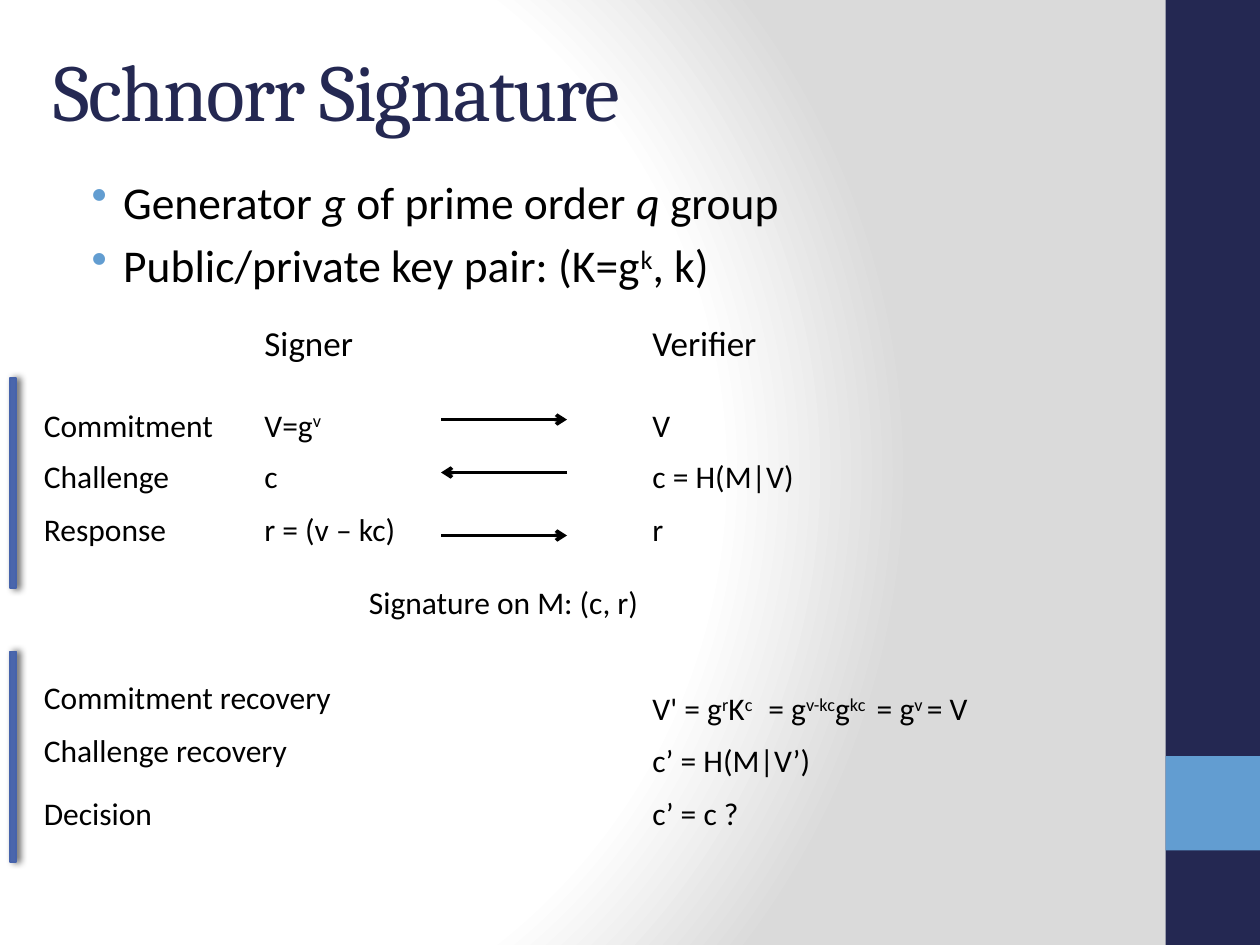
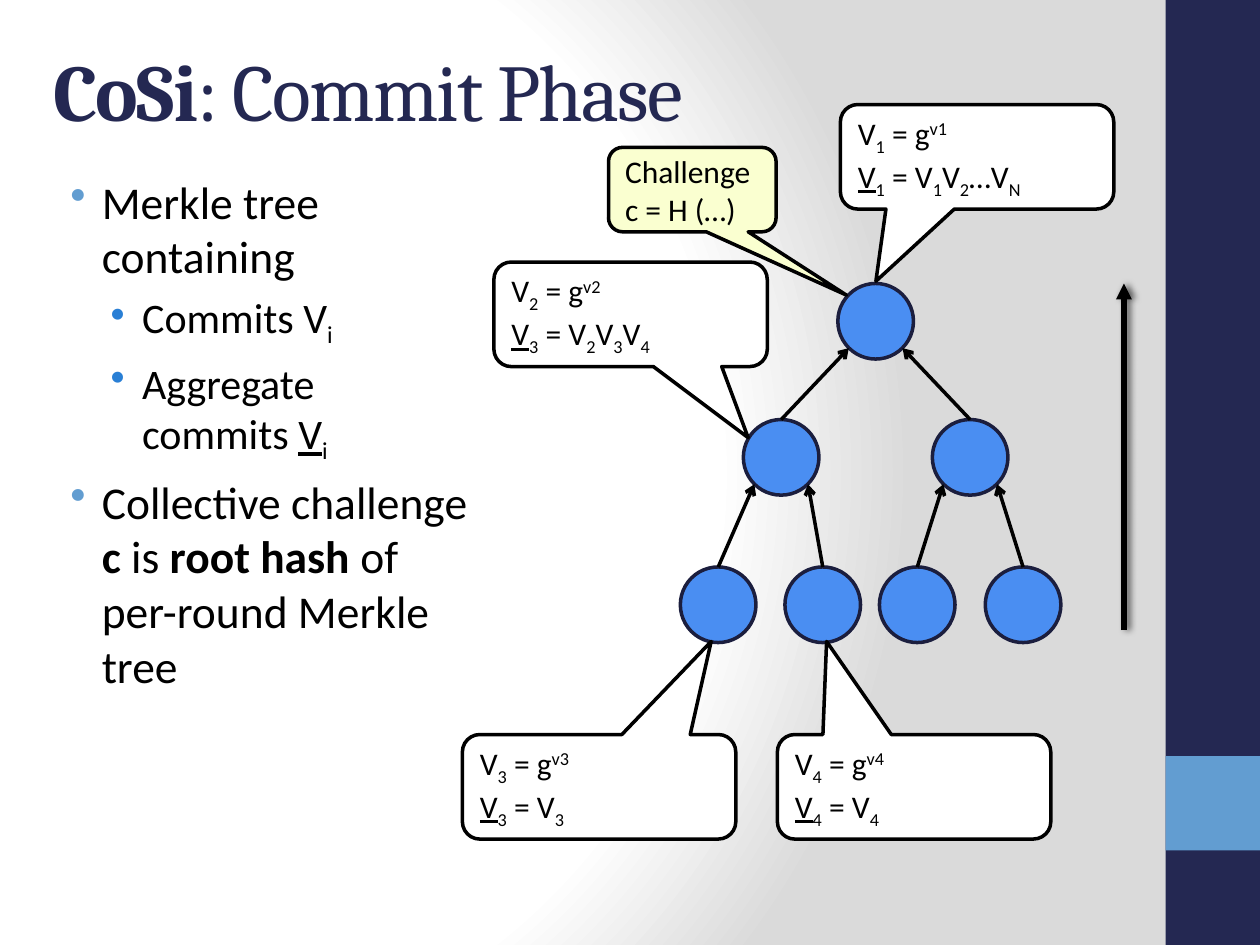
from lxml import etree
from pptx import Presentation, util as u
from pptx.dml.color import RGBColor
from pptx.enum import shapes, text
from pptx.oxml.ns import qn

NAVY, SKY, BLACK, WHITE = "242852", "629DD1", "000000", "FFFFFF"
NODE_FILL, NODE_EDGE, CHALLENGE_FILL = "4A8EF2", "1B1E3E", "FAFFD0"
BRACKET_FILL, BRACKET_EDGE = "4A66AC", "4663AB"
BACKDROP = [(0, WHITE), (75, WHITE), (100, "DADADA")]
BULLETS = [(0.38, 26, SKY), (0.7, 24, "297FD5")]
BASELINES = {"sup": "30000", "sub": "-25000"}
KIND = shapes.MSO_SHAPE

GROUP_FACTS = [
    (0, ["Generator ", ("g", "i"), " of prime order ", ("q", "i"), " group"]),
    (0, ["Public/private key pair: (K=g", ("k", "sup"), ", k)"]),
]
STEP_X, SIGNER_X, VERIFIER_X = 0.25, 2, 5.08
PARTIES = [(SIGNER_X, 0.92, "Signer"), (VERIFIER_X, 1.05, "Verifier")]
PROTOCOL = {
    3.17: [(STEP_X, 1.56, ["Commitment"]), (SIGNER_X, 0.68, ["V=g", ("v", "sup")]),
           (VERIFIER_X, 0.35, ["V"])],
    3.58: [(STEP_X, 1.21, ["Challenge"]), (SIGNER_X, 0.31, ["c"]),
           (VERIFIER_X, 1.33, ["c = H(M|V)"])],
    4: [(STEP_X, 1.19, ["Response"]), (SIGNER_X, 1.26, ["r = (v – kc)"]),
        (VERIFIER_X, 0.29, ["r"])],
    4.58: [(2.83, 2.37, ["Signature on M: (c, r)"])],
    5.33: [(STEP_X, 2.52, ["Commitment recovery"])],
    5.42: [(VERIFIER_X, 1.02, ["V' = g", ("r", "sup"), "K", ("c", "sup")]),
           (6, 1.88, ["= g", ("v-kc", "sup"), "g", ("kc ", "sup"), " = g",
                      ("v ", "sup"), "= V"])],
    5.75: [(STEP_X, 2.17, ["Challenge recovery"])],
    5.83: [(VERIFIER_X, 1.46, ["c’ = H(M|V’)"])],
    6.25: [(STEP_X, 1.07, ["Decision"]), (VERIFIER_X, 0.89, ["c’ = c ?"])],
}
MESSAGES = [(3.5, 4.5, 3.33), (4.5, 3.5, 3.75), (3.5, 4.5, 4.25)]
BRACKET_TOPS = [3, 5.17]

MERKLE_FACTS = [
    (0, ["Merkle tree containing"]),
    (1, ["Commits V", ("i", "sub")]),
    (1, ["Aggregate commits ", ("V", "u"), ("i", "sub")]),
    (0, ["Collective challenge ", ("c", "b"), " is ", ("root hash ", "b"),
         "of per-round Merkle tree"]),
]
NODE = 0.6
NODES = {
    "root": (6.65, 2.25), "left": (5.9, 3.33), "right": (7.4, 3.33),
    "leaf 1": (5.4, 4.5), "leaf 2": (6.23, 4.5), "leaf 3": (6.98, 4.5), "leaf 4": (7.82, 4.5),
}
PARENTS = {"leaf 1": "left", "leaf 2": "left", "leaf 3": "right", "leaf 4": "right",
           "left": "root", "right": "root"}
COMMITS = [
    (3.67, 5.83, (0.41, -1.39), "3", "3", ["3"]),
    (6.17, 5.83, (-0.32, -1.39), "4", "4", ["4"]),
    (3.92, 2.08, (0.43, 1.18), "2", "3", ["2", "3", "4"]),
    (6.67, 0.83, (-0.37, 1.19), "1", "1", ["1", "2", "…N"]),
]


def rgb(value):
    return RGBColor.from_string(value)


def add_xml(parent, tag, **attributes):
    return etree.SubElement(parent, qn(tag), attributes)


def write(paragraph, runs, size, color=BLACK, font="Calibri", spacing=None):
    for part in runs:
        words, style = (part, "") if isinstance(part, str) else part
        run = paragraph.add_run()
        run.text = words
        run.font.size, run.font.name = u.Pt(size), font
        run.font.color.rgb = rgb(color)
        run.font.bold = style == "b"
        run.font.italic = style == "i"
        run.font.underline = style == "u"
        properties = run._r.get_or_add_rPr()
        if style in BASELINES:
            properties.set("baseline", BASELINES[style])
        if spacing:
            properties.set("spc", str(spacing))


def text_frame(slide, x, y, w, h, wrap=True):
    frame = slide.shapes.add_textbox(*map(u.Inches, (x, y, w, h))).text_frame
    frame.word_wrap = wrap
    return frame


def label(slide, x, y, w, h, runs, size=18):
    frame = text_frame(slide, x, y, w, h, wrap=False)
    frame.auto_size = text.MSO_AUTO_SIZE.SHAPE_TO_FIT_TEXT
    write(frame.paragraphs[0], runs, size)


def bullet_list(slide, x, y, w, h, items):
    frame = text_frame(slide, x, y, w, h)
    for index, (level, runs) in enumerate(items):
        indent, size, color = BULLETS[level]
        paragraph = frame.add_paragraph() if index else frame.paragraphs[0]
        paragraph.level = level
        if index:
            paragraph.space_before = u.Pt(size * 0.2)
        properties = paragraph._p.get_or_add_pPr()
        properties.set("marL", str(u.Inches(indent)))
        properties.set("indent", str(u.Inches(-0.25)))
        add_xml(add_xml(properties, "a:buClr"), "a:srgbClr", val=color)
        add_xml(properties, "a:buChar", char="•")
        write(paragraph, runs, size)


def block(holder, kind, x, y, w, h, fill, edge=None, width=2):
    shape = holder.shapes.add_shape(kind, *map(u.Inches, (x, y, w, h)))
    shape.shadow.inherit = False
    shape.fill.solid()
    shape.fill.fore_color.rgb = rgb(fill)
    if edge:
        shape.line.color.rgb = rgb(edge)
        shape.line.width = u.Pt(width)
    else:
        shape.line.fill.background()
    return shape


def cast_shadow(effects):
    shadow = add_xml(effects, "a:outerShdw", blurRad=str(u.Pt(4)), dist=str(u.Pt(2)),
                     dir="0", rotWithShape="0")
    add_xml(add_xml(shadow, "a:srgbClr", val=BLACK), "a:alpha", val="60000")


def arrow(holder, start, end, head="arrow", width=2):
    line = holder.shapes.add_connector(shapes.MSO_CONNECTOR.STRAIGHT,
                                       *map(u.Inches, (*start, *end)))
    line.line.color.rgb = rgb(BLACK)
    line.line.width = u.Pt(width)
    add_xml(line.line._get_or_add_ln(), "a:tailEnd", type=head)
    return add_xml(line._element.spPr, "a:effectLst")


def callout(slide, x, y, w, h, tip, fill, lines):
    bubble = block(slide, KIND.ROUNDED_RECTANGULAR_CALLOUT, x, y, w, h, fill, BLACK)
    bubble.adjustments[0], bubble.adjustments[1] = tip
    frame = bubble.text_frame
    frame.word_wrap = True
    frame.vertical_anchor = text.MSO_ANCHOR.MIDDLE
    for index, runs in enumerate(lines):
        paragraph = frame.add_paragraph() if index else frame.paragraphs[0]
        paragraph.alignment = text.PP_ALIGN.LEFT
        write(paragraph, runs, 18)


def paint_backdrop(slide):
    slide.background.fill.gradient()
    gradient = slide._element.find(".//" + qn("a:gradFill"))
    for child in list(gradient):
        gradient.remove(child)
    stops = add_xml(gradient, "a:gsLst")
    for position, color in BACKDROP:
        stop = add_xml(stops, "a:gs", pos=str(position * 1000))
        add_xml(stop, "a:srgbClr", val=color)
    add_xml(add_xml(gradient, "a:path", path="circle"), "a:fillToRect",
            l="20000", t="50000", r="100000", b="50000")


def new_slide(deck, title):
    slide = deck.slides.add_slide(deck.slide_layouts[6])
    paint_backdrop(slide)
    block(slide, KIND.RECTANGLE, 9.25, 0, 0.75, 7.5, NAVY)
    block(slide, KIND.RECTANGLE, 9.25, 6, 0.75, 0.75, SKY)
    frame = text_frame(slide, 0.33, 0.08, 8.77, 1.25)
    frame.vertical_anchor = text.MSO_ANCHOR.MIDDLE
    write(frame.paragraphs[0], title, 46, NAVY, "Cambria", -100)
    return slide


def schnorr_slide(deck):
    slide = new_slide(deck, ["Schnorr Signature"])
    bullet_list(slide, 0.5, 1.33, 8.33, 1.25, GROUP_FACTS)
    for x, w, party in PARTIES:
        label(slide, x, 2.5, w, 0.44, [party], 20)
    for y, cells in PROTOCOL.items():
        for x, w, runs in cells:
            label(slide, x, y, w, 0.4, runs)
    for start, end, y in MESSAGES:
        arrow(slide, (start, y), (end, y))
    for y in BRACKET_TOPS:
        bracket = block(slide, KIND.RECTANGLE, 0.08, y, 0.05, 1.67, BRACKET_FILL, BRACKET_EDGE, 1)
        cast_shadow(bracket._element.spPr.find(qn("a:effectLst")))


def merkle_tree(slide):
    tree = slide.shapes.add_group_shape()
    for x, y in NODES.values():
        block(tree, KIND.OVAL, x, y, NODE, NODE, NODE_FILL, NODE_EDGE)
    radius = NODE / 2
    reach = radius * 0.71
    for child, parent in PARENTS.items():
        (x, y), (parent_x, parent_y) = NODES[child], NODES[parent]
        side = -reach if x < parent_x else reach
        arrow(tree, (x + radius, y),
              (parent_x + radius + side, parent_y + radius + reach))


def commit_slide(deck):
    slide = new_slide(deck, [("CoSi", "b"), ": Commit Phase"])
    bullet_list(slide, 0.33, 1.33, 3.5, 5.75, MERKLE_FACTS)
    merkle_tree(slide)
    for x, y, tip, own, aggregate, factors in COMMITS:
        commit = ["V", (own, "sub"), " = g", ("v" + own, "sup")]
        product = [("V", "u"), (aggregate, "sub"), " = "]
        for factor in factors:
            product += ["…V" if factor[0] == "…" else "V", (factor.lstrip("…"), "sub")]
        callout(slide, x, y, 2.17, 0.83, tip, WHITE, [commit, product])
    callout(slide, 4.83, 1.17, 1.33, 0.67, (0.92, 1.25), CHALLENGE_FILL,
            [["Challenge c = H (…)"]])
    cast_shadow(arrow(slide, (8.92, 5), (8.92, 2.25), "triangle", 3))


def main():
    deck = Presentation()
    deck.slide_width, deck.slide_height = u.Inches(10), u.Inches(7.5)
    schnorr_slide(deck)
    commit_slide(deck)
    deck.save("out.pptx")


if __name__ == "__main__":
    main()
